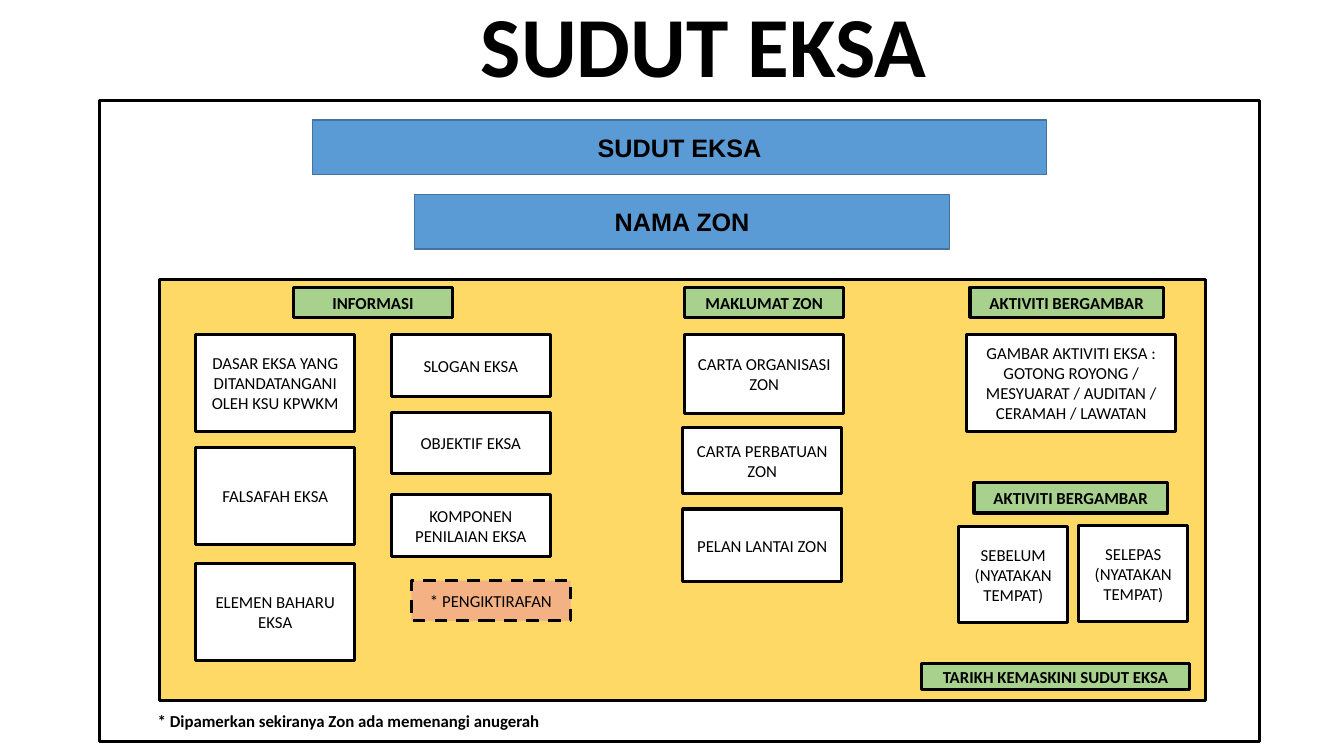
from dataclasses import dataclass

from pptx import Presentation
from pptx.dml.color import RGBColor
from pptx.enum.dml import MSO_LINE
from pptx.enum.shapes import MSO_SHAPE
from pptx.enum.text import MSO_ANCHOR, PP_ALIGN
from pptx.util import Inches, Pt

RECT = MSO_SHAPE.RECTANGLE
DASH = MSO_LINE.DASH
MIDDLE, TOP = MSO_ANCHOR.MIDDLE, MSO_ANCHOR.TOP
CENTER, LEFT = PP_ALIGN.CENTER, PP_ALIGN.LEFT


@dataclass(frozen=True)
class Theme:
    ink: str = "000000"
    paper: str = "FFFFFF"
    board: str = "FFD966"
    heading: str = "A9D18E"
    award: str = "F4B183"
    banner: str = "5B9BD5"
    banner_line: str = "43739E"
    body_font: str = "Calibri"
    banner_font: str = "Arial"
    title_size: int = 61
    banner_size: int = 18
    body_size: int = 12
    border: float = 2.25
    thin: float = 1


class Board:
    def __init__(self, slide, theme):
        self.s = slide
        self.t = theme

    def set_text(self, shape, text, size, bold=False, font=None, align=CENTER, anchor=MIDDLE):
        tf = shape.text_frame
        tf.word_wrap = True
        tf.vertical_anchor = anchor
        tf.text = text
        for p in tf.paragraphs:
            p.alignment = align
            for r in p.runs:
                r.font.name = font or self.t.body_font
                r.font.size = Pt(size)
                r.font.bold = bold
                r.font.color.rgb = RGBColor.from_string(self.t.ink)
        return tf

    def rect(self, x, y, w, h, fill, line=None, width=None):
        sp = self.s.shapes.add_shape(RECT, Inches(x), Inches(y), Inches(w), Inches(h))
        sp.shadow.inherit = False
        sp.fill.solid()
        sp.fill.fore_color.rgb = RGBColor.from_string(fill)
        sp.line.color.rgb = RGBColor.from_string(line or self.t.ink)
        sp.line.width = Pt(width or self.t.border)
        return sp

    def banner(self, x, y, w, text):
        sp = self.rect(x, y, w, 0.54, self.t.banner, self.t.banner_line, self.t.thin)
        self.set_text(sp, text, self.t.banner_size, True, self.t.banner_font)

    def heading(self, x, y, w, text, h=0.3):
        self.set_text(self.rect(x, y, w, h, self.t.heading), text, self.t.body_size, True)

    def card(self, x, y, w, h, text):
        self.set_text(self.rect(x, y, w, h, self.t.paper), text, self.t.body_size)

    def award(self, x, y, w, h, text):
        sp = self.rect(x, y, w, h, self.t.award)
        sp.line.dash_style = DASH
        self.set_text(sp, text, self.t.body_size)

    def label(self, x, y, w, h, text, size, align=CENTER, anchor=MIDDLE):
        sp = self.s.shapes.add_textbox(Inches(x), Inches(y), Inches(w), Inches(h))
        return self.set_text(sp, text, size, True, align=align, anchor=anchor)


def main():
    prs = Presentation()
    prs.slide_width, prs.slide_height = Inches(13.33), Inches(7.5)
    theme = Theme()
    board = Board(prs.slides.add_slide(prs.slide_layouts[6]), theme)

    board.rect(0.99, 1, 11.5, 6.36, theme.paper)
    board.banner(3.1, 1.19, 7.28, "SUDUT EKSA")
    board.banner(4.11, 1.93, 5.31, "NAMA ZON")
    board.rect(1.58, 2.77, 10.38, 4.18, theme.board)

    card_w, tall, short, row_y, heading_y = 1.58, 0.96, 0.61, 3.32, 2.85

    board.heading(2.91, heading_y, card_w, "INFORMASI")
    policy_cards = [
        (row_y, "DASAR EKSA YANG DITANDATANGANI OLEH KSU KPWKM"),
        (4.44, "FALSAFAH EKSA"),
        (5.59, "ELEMEN BAHARU EKSA"),
    ]
    for y, text in policy_cards:
        board.card(1.94, y, card_w, tall, text)
    goal_cards = [
        (row_y, "SLOGAN EKSA"),
        (4.09, "OBJEKTIF EKSA"),
        (4.91, "KOMPONEN PENILAIAN EKSA"),
    ]
    for y, text in goal_cards:
        board.card(3.88, y, card_w, short, text)
    board.award(4.08, 5.76, card_w, 0.4, "* PENGIKTIRAFAN")

    board.heading(6.79, heading_y, card_w, "MAKLUMAT ZON")
    zone_cards = [
        (6.79, row_y, 0.78, "CARTA ORGANISASI ZON"),
        (6.77, 4.24, 0.66, "CARTA PERBATUAN ZON"),
        (6.77, 5.05, 0.72, "PELAN LANTAI ZON"),
    ]
    for x, y, h, text in zone_cards:
        board.card(x, y, card_w, h, text)

    for x, y in [(9.62, heading_y), (9.66, 4.79)]:
        board.heading(x, y, 1.92, "AKTIVITI BERGAMBAR")
    board.card(9.59, row_y, 2.07, tall,
               "GAMBAR AKTIVITI EKSA :\nGOTONG ROYONG /\n"
               "MESYUARAT / AUDITAN / CERAMAH / LAWATAN")
    for x, y, stage in [(9.51, 5.22, "SEBELUM"), (10.7, 5.21, "SELEPAS")]:
        board.card(x, y, 1.08, tall, f"{stage}\n(NYATAKAN TEMPAT)")
    board.heading(9.14, 6.58, 2.66, "TARIKH KEMASKINI SUDUT EKSA", h=0.26)

    board.label(1.26, 7.03, 4.4, 0.25,
                "* Dipamerkan sekiranya Zon ada memenangi anugerah", theme.body_size)
    tf = board.label(4.67, -0.01, 4.99, 1.52, "SUDUT EKSA", theme.title_size, LEFT, TOP)
    tf.paragraphs[0].line_spacing = 0.9

    prs.save("out.pptx")


if __name__ == "__main__":
    main()
